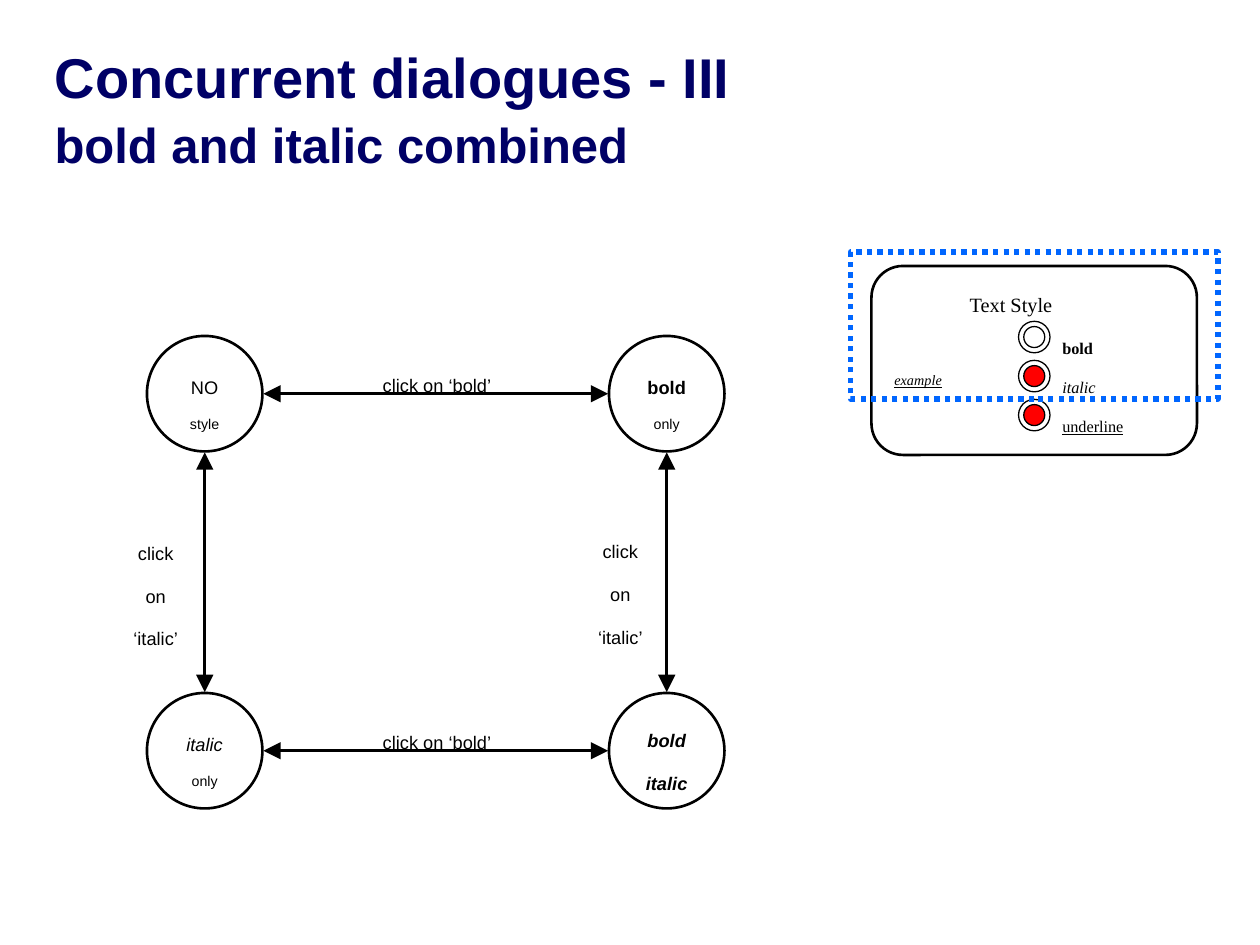
from lxml import etree
from pptx import Presentation
from pptx.dml.color import RGBColor
from pptx.enum.dml import MSO_LINE
from pptx.enum.shapes import MSO_CONNECTOR, MSO_SHAPE
from pptx.enum.text import MSO_ANCHOR, MSO_AUTO_SIZE, PP_ALIGN
from pptx.oxml.ns import qn
from pptx.util import Pt

OVAL, ROUNDED, RECTANGLE = MSO_SHAPE.OVAL, MSO_SHAPE.ROUNDED_RECTANGLE, MSO_SHAPE.RECTANGLE
STRAIGHT = MSO_CONNECTOR.STRAIGHT
DOTTED = MSO_LINE.ROUND_DOT
MIDDLE, BOTTOM = MSO_ANCHOR.MIDDLE, MSO_ANCHOR.BOTTOM
LEFT, CENTER = PP_ALIGN.LEFT, PP_ALIGN.CENTER
NO_FIT, GROW = MSO_AUTO_SIZE.NONE, MSO_AUTO_SIZE.SHAPE_TO_FIT_TEXT

BLACK = RGBColor(0x00, 0x00, 0x00)
WHITE = RGBColor(0xFF, 0xFF, 0xFF)
NAVY = RGBColor(0x00, 0x00, 0x66)
RED = RGBColor(0xFF, 0x00, 0x00)
BLUE = RGBColor(0x00, 0x66, 0xFF)
SANS, SERIF = "Arial", "Times New Roman"


def add_span(para, text, size=18, font=SANS, color=BLACK, bold=False,
             italic=False, underline=False, lowered=True):
    span = para.add_run()
    span.text = text
    span.font.size = Pt(size)
    span.font.name = font
    span.font.color.rgb = color
    span.font.bold = bold
    span.font.italic = italic
    span.font.underline = underline
    if lowered:
        span.font._element.set("baseline", "-25000")


def fill_text(frame, lines, align):
    frame.word_wrap = False
    for index, (text, style) in enumerate(lines):
        para = frame.add_paragraph() if index else frame.paragraphs[0]
        para.alignment = align
        add_span(para, text, **style)


def add_label(page, box, lines, align=LEFT):
    label = page.shapes.add_textbox(*map(Pt, box))
    label.text_frame.auto_size = GROW
    fill_text(label.text_frame, lines, align)


def add_outline(page, kind, box, fill=WHITE, line=BLACK, width=1.5):
    shape = page.shapes.add_shape(kind, *map(Pt, box))
    shape.shadow.inherit = False
    if fill is None:
        shape.fill.background()
    else:
        shape.fill.solid()
        shape.fill.fore_color.rgb = fill
    shape.line.color.rgb = line
    shape.line.width = Pt(width)
    return shape


def add_arrow(page, start, end):
    arrow = page.shapes.add_connector(STRAIGHT, *map(Pt, start + end))
    arrow.line.color.rgb = BLACK
    arrow.line.width = Pt(1.5)
    line = arrow.line._get_or_add_ln()
    for tag in ("a:headEnd", "a:tailEnd"):
        etree.SubElement(line, qn(tag), type="triangle", w="lg", len="lg")
    etree.SubElement(arrow._element.spPr, qn("a:effectLst"))


def add_title(page, box):
    title = page.shapes.title
    title.left, title.top, title.width, title.height = map(Pt, box)
    frame = title.text_frame
    frame.auto_size = NO_FIT
    frame.word_wrap = True
    frame.vertical_anchor = BOTTOM
    para = frame.paragraphs[0]
    para.alignment = LEFT
    para.line_spacing = 1.08
    style = dict(color=NAVY, bold=True, lowered=False)
    add_span(para, "Concurrent dialogues - III", size=32, **style)
    para.add_line_break()
    add_span(para, "bold and italic combined", size=28, **style)


def add_style_panel(page, box):
    left, top, width, height = box
    panel = add_outline(page, ROUNDED, box)
    panel.adjustments[0] = 0.167
    add_label(page, (left + 49, top - 2, 97, 31),
              [("Text Style", dict(size=20, font=SERIF))])
    options = [("bold", WHITE, dict(bold=True), 45),
               ("italic", RED, dict(italic=True), 48),
               ("underline", RED, dict(underline=True), 75)]
    for index, (name, dot, style, label_width) in enumerate(options):
        x, y = left + 84, top + 31.6 + 22.3 * index
        add_outline(page, OVAL, (x, y, 18, 18), width=0.75)
        add_outline(page, OVAL, (x + 3, y + 3, 12, 12), fill=dot, width=0.75)
        add_label(page, (x + 18, y - 4.3, label_width, 26.6),
                  [(name, dict(size=16, font=SERIF, **style))])
    add_label(page, (left + 6, top + 47.5, 61, 24),
              [("example", dict(size=14, font=SERIF, italic=True, underline=True))])


def add_state_diagram(page, box):
    left, top, width, height = box
    size, gap = 66, 0.5
    right, bottom = left + width - size, top + height - size
    small = dict(size=14)
    both = dict(bold=True, italic=True)
    states = [(left, top, [("NO", {}), ("style", small)]),
              (right, top, [("bold", dict(bold=True)), ("only", small)]),
              (left, bottom, [("italic", dict(italic=True)), ("only", small)]),
              (right, bottom, [("bold", both), ("italic", both)])]
    for x, y, lines in states:
        state = add_outline(page, OVAL, (x, y, size, size))
        state.text_frame.vertical_anchor = MIDDLE
        fill_text(state.text_frame, lines, CENTER)
    for y in (top, bottom):
        middle = y + size / 2
        add_arrow(page, (left + size + gap, middle), (right - gap, middle))
        add_label(page, (left + 105, y + 6, 121.5, 29), [("click on ‘bold’", {})], CENTER)
    words = [(word, {}) for word in ("click", "on", "‘italic’")]
    for x, label_left, label_top in ((left, 60, 294), (right, 325.5, 293)):
        middle = x + size / 2
        add_arrow(page, (middle, bottom - gap), (middle, top + size + gap))
        add_label(page, (label_left, label_top, 58, 72), words, CENTER)


def main():
    deck = Presentation()
    deck.slide_width, deck.slide_height = Pt(720), Pt(540)
    page = deck.slides.add_slide(deck.slide_layouts[5])
    add_title(page, (24, 24, 678, 78.5))
    add_style_panel(page, (498, 152, 186, 108))
    add_state_diagram(page, (84, 192, 330, 270))
    focus = add_outline(page, RECTANGLE, (486, 144, 210, 84), fill=None, line=BLUE, width=3)
    focus.line.dash_style = DOTTED
    deck.save("out.pptx")


if __name__ == "__main__":
    main()
